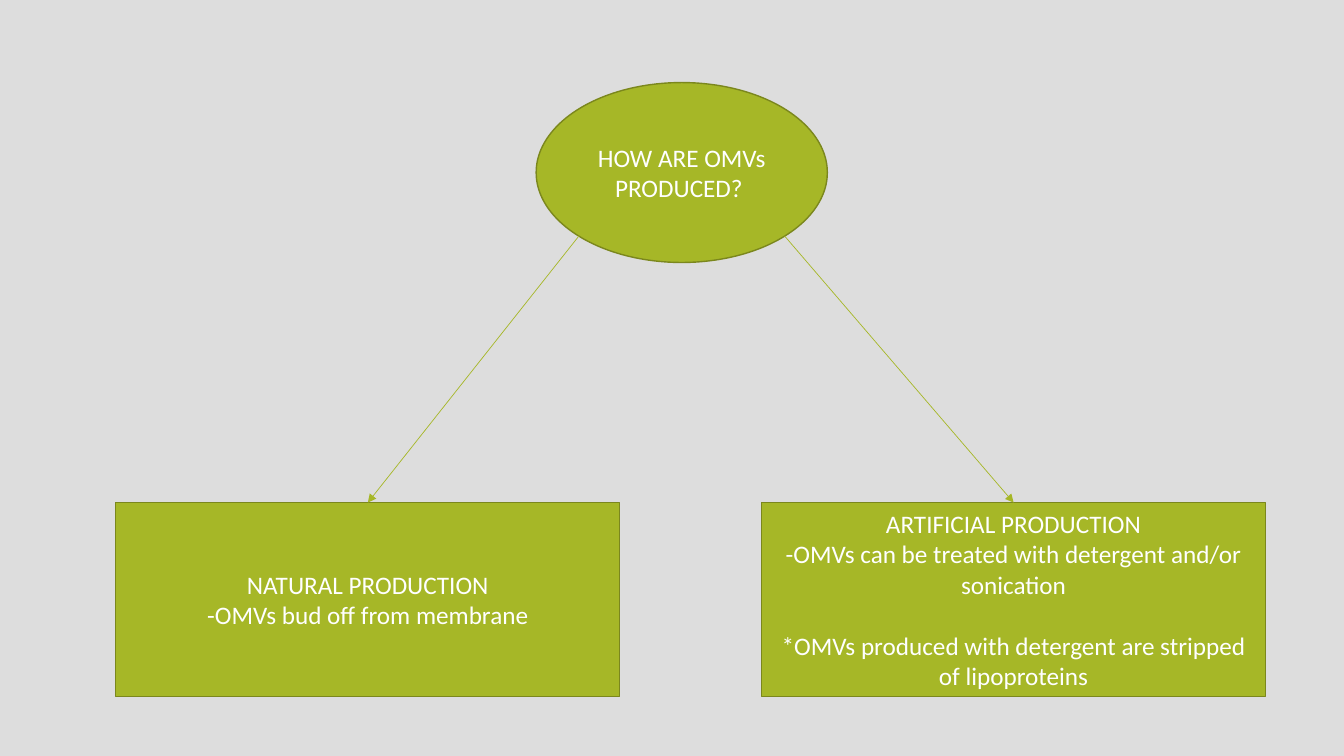
from math import sqrt

from lxml import etree
from pptx import Presentation
from pptx.dml.color import RGBColor
from pptx.enum.shapes import MSO_CONNECTOR, MSO_SHAPE
from pptx.enum.text import MSO_ANCHOR, PP_ALIGN
from pptx.oxml.ns import qn
from pptx.util import Pt

ELLIPSE, RECT = MSO_SHAPE.OVAL, MSO_SHAPE.RECTANGLE
STRAIGHT = MSO_CONNECTOR.STRAIGHT
MIDDLE, CENTER = MSO_ANCHOR.MIDDLE, PP_ALIGN.CENTER

COLORS = {"background": "DDDDDD", "green": "A6B727", "outline": "7B871D", "text": "FFFFFF"}
FONT, FONT_SIZE, LINE_HEIGHT = "Calibri", 18, 22

QUESTION = "HOW ARE OMVs PRODUCED? "
NATURAL = ["NATURAL PRODUCTION", "-OMVs bud off from membrane"]
ARTIFICIAL = [
    "ARTIFICIAL PRODUCTION",
    "-OMVs can be treated with detergent and/or sonication",
    "*OMVs produced with detergent are stripped of lipoproteins",
]

QUESTION_BOX = (383, 59, 208, 128.5)
ANSWER_TOP, ANSWER_WIDTH, ANSWER_HEIGHT = 359, 360, 138.5
NATURAL_LEFT, ARTIFICIAL_LEFT = 82.75, 544


def color(name):
    return RGBColor.from_string(COLORS[name])


def add_node(s, kind, box, lines):
    """Add a filled shape with centred text; a line starting with * is set apart."""
    sp = s.shapes.add_shape(kind, *(Pt(v) for v in box))
    sp.shadow.inherit = False
    sp.fill.solid()
    sp.fill.fore_color.rgb = color("green")
    sp.line.color.rgb = color("outline")
    sp.line.width = Pt(1)
    tf = sp.text_frame
    tf.word_wrap = True
    tf.vertical_anchor = MIDDLE
    tf.text = "\n".join(lines)
    for p in tf.paragraphs:
        p.alignment = CENTER
        if p.text.startswith("*"):
            p.space_before = Pt(LINE_HEIGHT)
        for r in p.runs:
            r.font.name = FONT
            r.font.size = Pt(FONT_SIZE)
            r.font.color.rgb = color("text")
    return sp


def add_arrow(s, ellipse, box, side):
    """Run an arrow from the ellipse's lower diagonal (side -1 left, 1 right) to the box top."""
    x = ellipse.left + ellipse.width * (0.5 + side * sqrt(2) / 4)
    y = ellipse.top + ellipse.height * (0.5 + sqrt(2) / 4)
    arrow = s.shapes.add_connector(STRAIGHT, int(x), int(y), int(x), int(y))
    arrow.end_connect(box, 0)
    arrow.line.color.rgb = color("green")
    arrow.line.width = Pt(0.5)
    etree.SubElement(arrow.line._get_or_add_ln(), qn("a:tailEnd"), type="triangle")
    etree.SubElement(arrow._element.spPr, qn("a:effectLst"))


def build_production_slide(prs):
    s = prs.slides.add_slide(prs.slide_layouts.get_by_name("Blank"))
    s.background.fill.solid()
    s.background.fill.fore_color.rgb = color("background")
    question = add_node(s, ELLIPSE, QUESTION_BOX, [QUESTION])
    answers = ((NATURAL_LEFT, NATURAL, -1), (ARTIFICIAL_LEFT, ARTIFICIAL, 1))
    for left, lines, side in answers:
        box = add_node(s, RECT, (left, ANSWER_TOP, ANSWER_WIDTH, ANSWER_HEIGHT), lines)
        add_arrow(s, question, box, side)


def main():
    prs = Presentation()
    prs.slide_width, prs.slide_height = Pt(960), Pt(540)
    build_production_slide(prs)
    prs.save("out.pptx")


if __name__ == "__main__":
    main()
